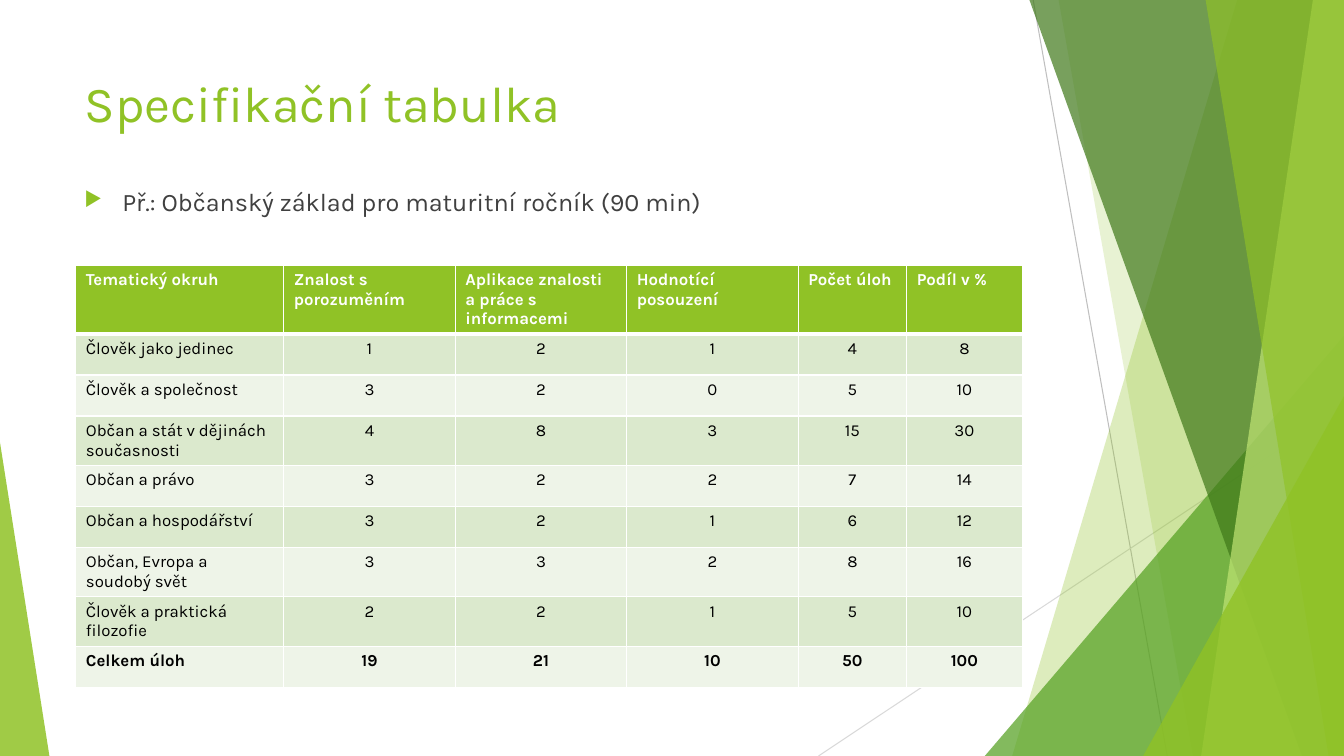
from lxml import etree
from pptx import Presentation
from pptx.dml.color import RGBColor
from pptx.enum import shapes, text
from pptx.oxml import ns
from pptx.util import Pt

GREEN = RGBColor(0x90, 0xC2, 0x26)
MID_GREEN = RGBColor(0x54, 0xA0, 0x21)
DARK_GREEN = RGBColor(0x3F, 0x78, 0x19)
PALE_GREEN = RGBColor(0xC0, 0xE4, 0x74)
BAND_DARK = RGBColor(0xDB, 0xE9, 0xCD)
BAND_LIGHT = RGBColor(0xEE, 0xF4, 0xE8)
GREY = RGBColor(0xBF, 0xBF, 0xBF)
LIGHT_GREY = RGBColor(0xD9, 0xD9, 0xD9)
BODY_GREY = RGBColor(0x40, 0x40, 0x40)
BLACK = RGBColor(0, 0, 0)
WHITE = RGBColor(0xFF, 0xFF, 0xFF)

WIDTH, HEIGHT = 960, 540
BLEED = -0.6

# Each panel reaches the right edge: top left x, bottom left x, colour, opacity
BACK_PANELS = [(884.16, 722.88, GREEN, 30), (756, 851.76, GREEN, 20)]
FRONT_PANELS = [
    (735.12, 929.52, DARK_GREEN, 70),
    (938.16, 858.24, PALE_GREEN, 70),
    (861.12, 948.96, GREEN, 65),
]

COLUMN_WIDTHS = [148.5, 122.5, 122.5, 122.5, 77.5, 82.5]
ROW_HEIGHT = 29.3
HEADER = ["Tematický okruh", "Znalost s porozuměním",
          "Aplikace znalosti\va práce s informacemi",
          "Hodnotící posouzení", "Počet úloh", "Podíl v %"]
TOPICS = [
    ("Člověk jako jedinec", 1, 2, 1, 4, 8),
    ("Člověk a společnost", 3, 2, 0, 5, 10),
    ("Občan a stát v dějinách současnosti", 4, 8, 3, 15, 30),
    ("Občan a právo", 3, 2, 2, 7, 14),
    ("Občan a hospodářství", 3, 2, 1, 6, 12),
    ("Občan, Evropa a soudobý svět", 3, 3, 2, 8, 16),
    ("Člověk a praktická filozofie", 2, 2, 1, 5, 10),
    ("Celkem úloh", 19, 21, 10, 50, 100),
]


def add_xml(parent, tag, **attributes):
    return etree.SubElement(parent, ns.qn(tag), attributes)


def style_text(paragraph, size, color, bold=False):
    for run in paragraph.runs:
        for key, value in {"name": "Karla", "size": Pt(size), "bold": bold}.items():
            setattr(run.font, key, value)
        run.font.color.rgb = color
    for line_break in paragraph._p.findall(ns.qn("a:br")):
        add_xml(line_break, "a:rPr", sz=str(size * 100))


def place(shape, left, top, width, height):
    box = {"left": left, "top": top, "width": width, "height": height}
    for key, value in box.items():
        setattr(shape, key, Pt(value))


def set_frame(frame):
    settings = {"word_wrap": True, "auto_size": text.MSO_AUTO_SIZE.NONE,
                "vertical_anchor": text.MSO_ANCHOR.TOP}
    for key, value in settings.items():
        setattr(frame, key, value)


def paint(shape, color, opacity):
    shape.shadow.inherit = False
    shape.line.fill.background()
    shape.fill.solid()
    shape.fill.fore_color.rgb = color
    tint = shape.fill._xPr.find(ns.qn("a:solidFill"))[0]
    add_xml(tint, "a:alpha", val=str(opacity * 1000))


def add_ray(slide, start, end, color):
    ray = slide.shapes.add_connector(
        shapes.MSO_CONNECTOR.STRAIGHT, *map(Pt, start + end))
    ray.line.color.rgb = color
    ray.line.width = Pt(0.75)
    add_xml(ray._element.spPr, "a:effectLst")


def add_panel(slide, top_x, bottom_x, color, opacity):
    outline = slide.shapes.build_freeform(top_x, BLEED, scale=Pt(1))
    outline.add_line_segments(
        [(WIDTH, BLEED), (WIDTH, HEIGHT), (bottom_x, HEIGHT)], close=True)
    paint(outline.convert_to_shape(), color, opacity)


def add_corner(slide, left, width, height, apex, color, opacity):
    """Triangle standing on the bottom edge of the slide."""
    corner = slide.shapes.add_shape(
        shapes.MSO_SHAPE.ISOSCELES_TRIANGLE,
        Pt(left), Pt(HEIGHT - height), Pt(width), Pt(height))
    corner.adjustments[0] = apex
    paint(corner, color, opacity)


def add_decoration(slide):
    add_ray(slide, (738, 0), (833.76, HEIGHT), GREY)
    add_ray(slide, (WIDTH, 290.16), (584.64, HEIGHT), LIGHT_GREY)
    for panel in BACK_PANELS:
        add_panel(slide, *panel)
    add_corner(slide, 703.44, 256.56, 300.24, 1, MID_GREEN, 72)
    for panel in FRONT_PANELS:
        add_panel(slide, *panel)
    add_corner(slide, 816.48, 143.52, 257.04, 1, GREEN, 80)
    add_corner(slide, 0, 35.28, 223.92, 0, GREEN, 85)


def add_title(slide, wording):
    title = slide.shapes.title
    place(title, 53.3, 48, 676.8, 103.7)
    set_frame(title.text_frame)
    title.text_frame.text = wording
    heading = title.text_frame.paragraphs[0]
    heading.alignment = text.PP_ALIGN.LEFT
    style_text(heading, 36, GREEN)


def fill_cell(cell, wording, fill, color, bold, centred, top=1, bottom=1):
    cell.text = str(wording)
    paragraph = cell.text_frame.paragraphs[0]
    paragraph.alignment = text.PP_ALIGN.CENTER if centred else text.PP_ALIGN.LEFT
    style_text(paragraph, 12, color, bold)
    # Borders come before the fill in the cell properties
    properties = cell._tc.get_or_add_tcPr()
    for side, width in {"L": 1, "R": 1, "T": top, "B": bottom}.items():
        border = add_xml(properties, f"a:ln{side}", w=str(Pt(width)))
        add_xml(add_xml(border, "a:solidFill"), "a:srgbClr", val=str(WHITE))
    cell.fill.solid()
    cell.fill.fore_color.rgb = fill


def add_topic_table(slide):
    rows = len(TOPICS) + 1
    table = slide.shapes.add_table(
        rows, len(HEADER), Pt(54.2), Pt(189.3),
        Pt(sum(COLUMN_WIDTHS)), Pt(rows * ROW_HEIGHT)).table
    for column, width in zip(table.columns, COLUMN_WIDTHS):
        column.width = Pt(width)
    for row in table.rows:
        row.height = Pt(ROW_HEIGHT)
    for c, heading in enumerate(HEADER):
        fill_cell(table.cell(0, c), heading, GREEN, WHITE, True, False, bottom=3)
    for r, topic in enumerate(TOPICS, start=1):
        band = BAND_DARK if r % 2 else BAND_LIGHT
        for c, value in enumerate(topic):
            fill_cell(table.cell(r, c), value, band, BLACK,
                      bold=r == len(TOPICS), centred=c > 0, top=3 if r == 1 else 1)


def add_example(slide, wording):
    example = slide.shapes.add_textbox(0, 0, 0, 0)
    place(example, 53.3, 129.6, 676.8, 104.4)
    set_frame(example.text_frame)
    example.text_frame.text = wording
    paragraph = example.text_frame.paragraphs[0]
    properties = paragraph._p.get_or_add_pPr()
    for key, value in {"marL": Pt(27), "indent": Pt(-27)}.items():
        properties.set(key, str(value))
    add_xml(add_xml(properties, "a:buClr"), "a:srgbClr", val=str(GREEN))
    add_xml(properties, "a:buSzPct", val="80000")
    add_xml(properties, "a:buChar", char="▶")
    style_text(paragraph, 18, BODY_GREY)


def main():
    deck = Presentation()
    deck.slide_width, deck.slide_height = Pt(WIDTH), Pt(HEIGHT)
    slide = deck.slides.add_slide(deck.slide_layouts[5])
    add_decoration(slide)
    add_title(slide, "Specifikační tabulka")
    add_topic_table(slide)
    add_example(slide, "Př.: Občanský základ pro maturitní ročník (90 min)")
    deck.save("out.pptx")


if __name__ == "__main__":
    main()
